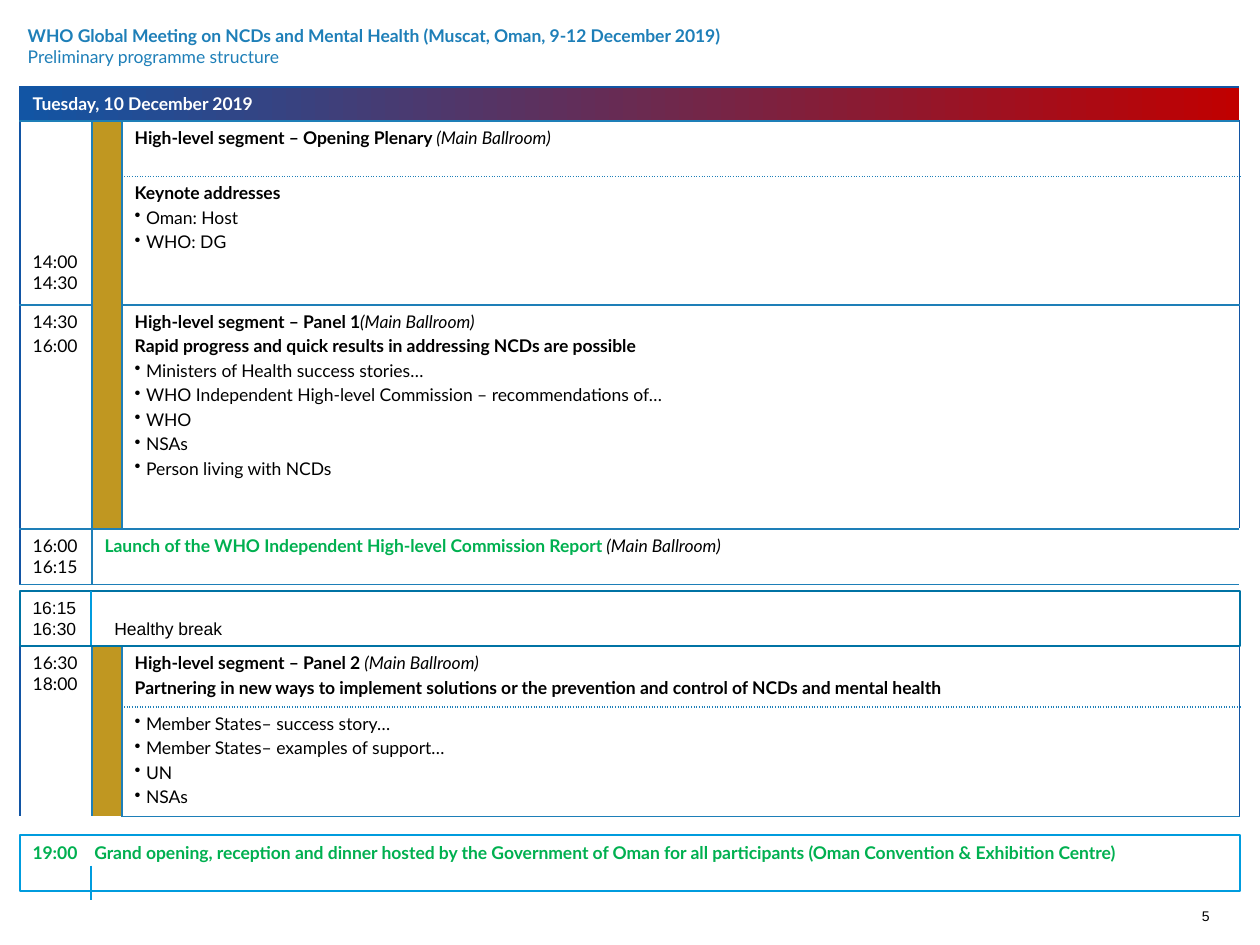
from lxml.etree import SubElement
from pptx import Presentation
from pptx.dml.color import RGBColor
from pptx.enum.shapes import MSO_CONNECTOR, MSO_SHAPE
from pptx.enum.text import MSO_ANCHOR as Anchor, MSO_AUTO_SIZE, PP_ALIGN as Align
from pptx.oxml import parse_xml
from pptx.oxml.ns import nsdecls, qn
from pptx.util import Inches, Pt

NAVY = RGBColor(0x12, 0x55, 0xA4)
BLUE = RGBColor(0x1E, 0x7F, 0xB8)
SKY = RGBColor(0x00, 0x9C, 0xDE)
TEAL = RGBColor(0x00, 0x73, 0xA4)
RED = RGBColor(0xC0, 0x00, 0x00)
GOLD = RGBColor(0xC0, 0x97, 0x21)
GREEN = RGBColor(0x00, 0xB0, 0x50)
WHITE = RGBColor(0xFF, 0xFF, 0xFF)
BLACK = RGBColor(0x00, 0x00, 0x00)

PLAIN = {"name": "Lato", "size": Pt(10), "color": BLACK, "bold": False, "italic": False}
BOLD = PLAIN | {"bold": True}
ITALIC = PLAIN | {"italic": True}
LAUNCH = BOLD | {"color": GREEN}
DAY = BOLD | {"color": WHITE}
HEADING = BOLD | {"color": BLUE}
SUBHEADING = PLAIN | {"color": BLUE}
BREAK = PLAIN | {"name": "Arial"}
PAGE = BREAK | {"size": Pt(8)}

LEFT, WIDTH, BAND_HEIGHT = 0.16, 9.68, 0.44
COLUMNS = (0.57, 0.24, 8.87)
ROOM = ("(Main Ballroom)", ITALIC)


def plain(*lines):
    return [[(line, PLAIN)] for line in lines]


def bullets(*lines):
    return [[("•", None), (line, PLAIN)] for line in lines]


class Programme:
    def __init__(self, slide):
        self.slide = slide

    def fill_text(self, frame, paragraphs, gap=0, tab=None, align=Align.LEFT):
        """Fill a text frame; each paragraph is a list of (text, format) runs."""
        frame.word_wrap = True
        for number, runs in enumerate(paragraphs):
            para = frame.add_paragraph() if number else frame.paragraphs[0]
            para.alignment = align
            para.space_before = Pt(gap if number else 0)
            props = para._p.get_or_add_pPr()
            if runs[0][1] is None:
                props.set("marL", str(Inches(0.09)))
                props.set("indent", str(-Inches(0.09)))
                SubElement(props, qn("a:buChar"), char=runs[0][0])
                runs = runs[1:]
            if tab:
                stops = SubElement(props, qn("a:tabLst"))
                SubElement(stops, qn("a:tab"), pos=str(Inches(tab)), algn="l")
            for text, style in runs:
                run = para.add_run()
                run.text = text
                for key, value in style.items():
                    if key == "color":
                        run.font.color.rgb = value
                    else:
                        setattr(run.font, key, value)

    def title(self, paragraphs):
        box = self.slide.shapes.title
        box.left, box.top, box.width, box.height = map(Inches, (0.12, 0.15, 8.05, 0.5))
        box.text_frame.auto_size = MSO_AUTO_SIZE.NONE
        box.text_frame.vertical_anchor = Anchor.TOP
        self.fill_text(box.text_frame, paragraphs)

    def page_number(self, text):
        frame = self.slide.shapes.add_textbox(*map(Inches, (9.36, 7.2, 0.24, 0.2))).text_frame
        for side in ("left", "right", "top", "bottom"):
            setattr(frame, f"margin_{side}", 0)
        self.fill_text(frame, [[(text, PAGE)]], align=Align.RIGHT)

    def band(self, top, color, weight, paragraphs, tab):
        box = self.slide.shapes.add_shape(
            MSO_SHAPE.RECTANGLE, *map(Inches, (LEFT, top, WIDTH, BAND_HEIGHT)))
        box.shadow.inherit = False
        box.fill.background()
        box.line.color.rgb = color
        box.line.width = Pt(weight)
        box.text_frame.vertical_anchor = Anchor.TOP
        self.fill_text(box.text_frame, paragraphs, tab=tab)

    def divider(self, top, bottom):
        line = self.slide.shapes.add_connector(
            MSO_CONNECTOR.STRAIGHT, *map(Inches, (0.72, top, 0.72, bottom)))
        line.line.color.rgb = SKY
        line.line.width = Pt(1)
        SubElement(line._element.spPr, qn("a:effectLst"))

    def borders(self, cell, sides):
        """Draw the given sides, a dict of side letter to (colour, dash)."""
        props = cell._tc.get_or_add_tcPr()
        drawn = [side for side in "LRTB" if side in sides]
        for place, side in enumerate(drawn):
            color, dash = sides[side]
            props.insert(place, parse_xml(
                f'<a:ln{side} {nsdecls("a")} w="12700"><a:solidFill><a:srgbClr val="{color}"/>'
                f'</a:solidFill><a:prstDash val="{dash}"/></a:ln{side}>'))

    def table(self, top, heights, sessions, dotted_row):
        """Sessions are (row, column, rows, columns, fill, paragraphs)."""
        frame = self.slide.shapes.add_table(
            len(heights), len(COLUMNS), *map(Inches, (LEFT, top, WIDTH, sum(heights))))
        table = frame.table
        table.first_row = table.horz_banding = False
        for column, width in zip(table.columns, COLUMNS):
            column.width = Inches(width)
        for row, height in zip(table.rows, heights):
            row.height = Inches(height)
        for row, col, rows, cols, fill, paragraphs in sessions:
            cell = table.cell(row, col)
            last_row, last_col = row + rows - 1, col + cols - 1
            if rows * cols > 1:
                cell.merge(table.cell(last_row, last_col))
            self.fill_text(cell.text_frame, paragraphs, gap=2)
            for r in range(row, last_row + 1):
                for c in range(col, last_col + 1):
                    part = table.cell(r, c)
                    if fill is None:
                        part.fill.gradient()
                        part.fill.gradient_angle = 0
                        for stop, color in zip(part.fill.gradient_stops, (NAVY, RED)):
                            stop.color.rgb = color
                    else:
                        part.fill.solid()
                        part.fill.fore_color.rgb = fill
                    sides = {}
                    if c == col:
                        sides["L"] = (BLUE if c else NAVY, "solid")
                    if c == last_col:
                        sides["R"] = (NAVY if c == len(COLUMNS) - 1 else BLUE, "solid")
                    if r == row:
                        dash = "sysDot" if c == 2 and r == dotted_row + 1 else "solid"
                        sides["T"] = (BLUE if r else NAVY, dash)
                    if r == last_row:
                        dash = "sysDot" if c == 2 and r == dotted_row else "solid"
                        sides["B"] = (BLUE, dash)
                    self.borders(part, sides)
        return table


def main():
    deck = Presentation()
    deck.slide_width, deck.slide_height = Inches(10), Inches(7.5)
    page = Programme(deck.slides.add_slide(deck.slide_layouts[5]))

    page.title([
        [("WHO Global Meeting on NCDs and Mental Health (Muscat, Oman, 9-12 December 2019)", HEADING)],
        [("Preliminary programme structure", SUBHEADING)]])
    page.page_number("5")

    afternoon = page.table(0.69, (0.27, 0.44, 1.02, 1.78, 0.44), [
        (0, 0, 1, 3, None, [[("Tuesday, 10 December 2019", DAY)]]),
        (1, 0, 2, 1, WHITE, plain("14:00 14:30")),
        (1, 1, 3, 1, GOLD, []),
        (1, 2, 1, 1, WHITE, [[("High-level segment – Opening Plenary ", BOLD), ROOM]]),
        (2, 2, 1, 1, WHITE, [[("Keynote addresses", BOLD)]] + bullets("Oman: Host", "WHO: DG")),
        (3, 0, 1, 1, WHITE, plain("14:30", "16:00")),
        (3, 2, 1, 1, WHITE, [
            [("High-level segment – Panel 1", BOLD), ROOM],
            [("Rapid progress and quick results in addressing NCDs are possible", BOLD)],
            *bullets("Ministers of Health success stories…",
                     "WHO Independent High-level Commission – recommendations of…",
                     "WHO", "NSAs", "Person living with NCDs")]),
        (4, 0, 1, 1, WHITE, plain("16:00 16:15")),
        (4, 1, 1, 2, WHITE, [
            [("Launch of the WHO Independent High-level Commission Report ", LAUNCH), ROOM]]),
    ], dotted_row=1)
    opening_time = afternoon.cell(1, 0)
    opening_time.vertical_anchor = Anchor.BOTTOM
    opening_time.margin_bottom = Inches(0.09)

    page.table(5.13, (0.48, 0.87), [
        (0, 0, 2, 1, WHITE, plain("16:30 18:00")),
        (0, 1, 2, 1, GOLD, []),
        (0, 2, 1, 1, WHITE, [
            [("High-level segment – Panel 2 ", BOLD), ROOM],
            [("Partnering in new ways to implement solutions or the prevention and control "
              "of NCDs and mental health", BOLD)]]),
        (1, 2, 1, 1, WHITE, bullets("Member States– success story…",
                                    "Member States– examples of support…", "UN", "NSAs")),
    ], dotted_row=0)

    page.band(6.63, SKY, 1, [
        [("19:00\tGrand opening, reception and dinner hosted by the Government of Oman for all "
          "participants (Oman Convention & Exhibition Centre)", LAUNCH)]], tab=0.49)
    page.band(4.69, TEAL, 1.25, [[("16:15", BREAK)], [("16:30\tHealthy break", BREAK)]], tab=0.65)
    page.divider(4.69, 5.12)
    page.divider(6.87, 7.14)
    deck.save("out.pptx")


if __name__ == "__main__":
    main()
